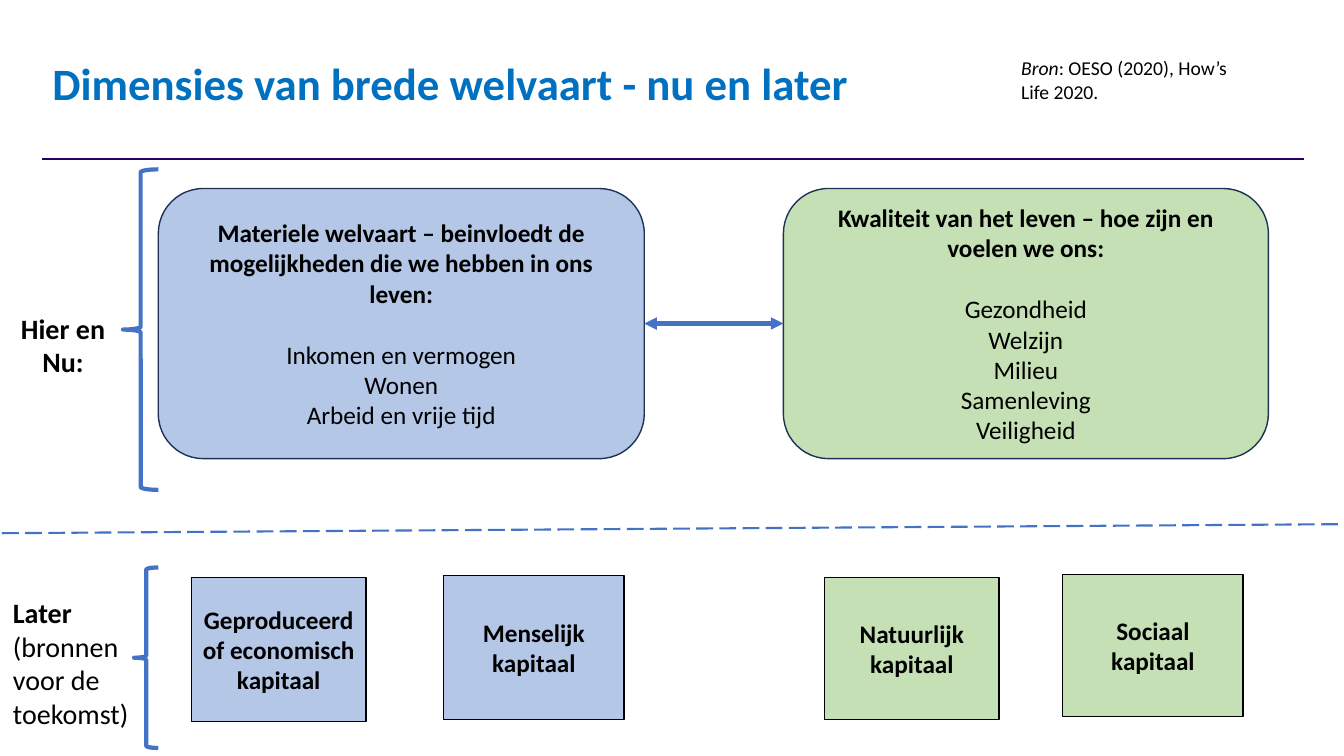
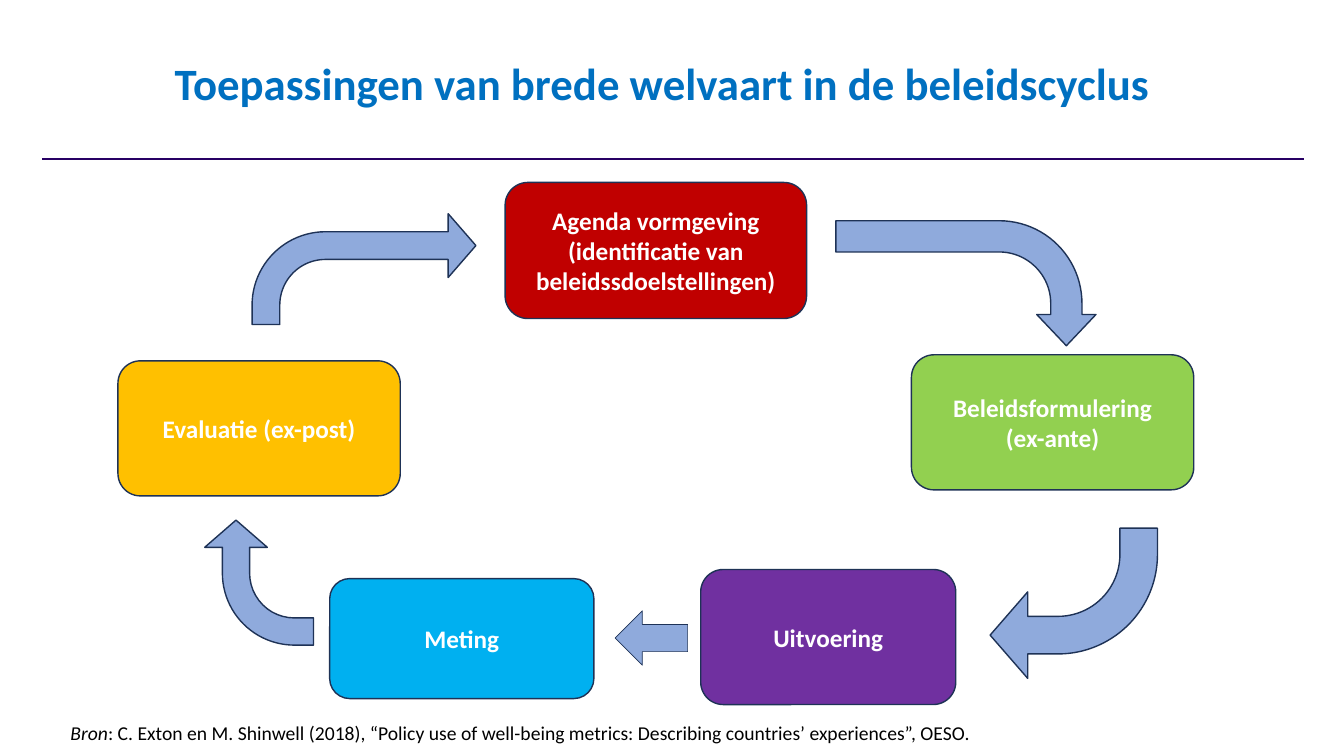
from lxml import etree
from pptx import Presentation
from pptx.dml.color import RGBColor
from pptx.enum import dml, shapes, text
from pptx.oxml import ns
from pptx.util import Inches, Pt

# Shared style
FONT = "Calibri"
BLACK = RGBColor(0x00, 0x00, 0x00)
WHITE = RGBColor(0xFF, 0xFF, 0xFF)
TITLE_BLUE = RGBColor(0x00, 0x70, 0xC0)
RULE_PURPLE = RGBColor(0x28, 0x00, 0x64)
ACCENT_BLUE = RGBColor(0x44, 0x72, 0xC4)
OUTLINE = RGBColor(0x1E, 0x32, 0x56)
PALE_BLUE = RGBColor(0xB4, 0xC7, 0xE7)
PALE_GREEN = RGBColor(0xC5, 0xE0, 0xB4)
ARROW_BLUE = RGBColor(0x8F, 0xAA, 0xDC)
RED = RGBColor(0xC0, 0x00, 0x00)
GREEN = RGBColor(0x92, 0xD0, 0x50)
PURPLE = RGBColor(0x70, 0x30, 0xA0)
SKY = RGBColor(0x00, 0xB0, 0xF0)
AMBER = RGBColor(0xFF, 0xC0, 0x00)

LEFT, CENTER = text.PP_ALIGN.LEFT, text.PP_ALIGN.CENTER
SHAPE = shapes.MSO_SHAPE

# Slide 1 content: places are left, top, width, height in inches
NOW_TITLE = "Dimensies van brede welvaart - nu en later"
DIMENSIONS = [
    ((1.57, 1.87, 4.82, 2.68), PALE_BLUE,
     "Materiele welvaart – beinvloedt de mogelijkheden die we hebben in ons leven:",
     ["Inkomen en vermogen", "Wonen", "Arbeid en vrije tijd"]),
    ((7.77, 1.87, 4.81, 2.68), PALE_GREEN,
     "Kwaliteit van het leven – hoe zijn en voelen we ons:",
     ["Gezondheid", "Welzijn", "Milieu", "Samenleving", "Veiligheid"]),
]
CAPITALS = [
    ((1.9, 5.73, 1.73, 1.43), PALE_BLUE, "Geproduceerd of economisch kapitaal"),
    ((4.4, 5.71, 1.79, 1.43), PALE_BLUE, "Menselijk kapitaal"),
    ((8.18, 5.73, 1.73, 1.41), PALE_GREEN, "Natuurlijk kapitaal"),
    ((10.54, 5.7, 1.79, 1.41), PALE_GREEN, "Sociaal kapitaal"),
]
BRACES = [(1.22, 1.68, 0.35, 3.18), (1.33, 5.63, 0.24, 1.79)]
NOW_LABEL = ((0.02, 3.04, 1.21, 0.77), [("Hier en Nu:", "bold")])
LATER_LABEL = ((0.03, 5.86, 1.36, 1.45),
               [("Later ", "bold"), ("(bronnen voor de toekomst)", "")])
NOW_SOURCE = ((10.03, 0.51, 2.55, 0.57),
              [("Bron", "italic"), (": OESO (2020), How’s Life 2020.", "")])

# Slide 2 content
CYCLE_TITLE = "Toepassingen van brede welvaart in de beleidscyclus"
PHASES = [
    ((5.01, 1.81, 2.99, 1.35), RED,
     "Agenda vormgeving (identificatie van beleidssdoelstellingen)"),
    ((9.04, 3.52, 2.8, 1.34), GREEN, "Beleidsformulering\n(ex-ante)"),
    ((6.95, 5.65, 2.53, 1.34), PURPLE, "Uitvoering"),
    ((3.27, 5.74, 2.62, 1.19), SKY, "Meting"),
    ((1.17, 3.58, 2.8, 1.34), AMBER, "Evaluatie (ex-post)"),
]
# Place before rotation, rotation in degrees, half width of the arrowhead
BENT_ARROWS = [
    ((8.96, 1.52, 1.24, 2.58), 90, 0.237),
    ((9.82, 5.24, 1.66, 1.49), 180, 0.288),
    ((1.95, 5.24, 1.24, 1.08), 270, 0.288),
    ((2.5, 2.12, 2.22, 1.1), 0, 0.288),
]
STRAIGHT_ARROW = (6.1, 6.06, 0.72, 0.54)
CYCLE_SOURCE = ((0.6, 7.1, 11.57, 0.34),
                [("Bron", "italic"),
                 (": C. Exton en M. Shinwell (2018), “Policy use of well-being "
                  "metrics: Describing countries’ experiences”, OESO.", "")])


def inches(place):
    return [Inches(value) for value in place]


def style_run(run, size, color, bold=False, italic=False):
    run.font.name, run.font.size = FONT, Pt(size)
    run.font.color.rgb = color
    run.font.bold, run.font.italic = bold, italic


def add_figure(slide, preset, place, fill, line, width):
    figure = slide.shapes.add_shape(preset, *inches(place))
    figure.shadow.inherit = False
    if fill is None:
        figure.fill.background()
    else:
        figure.fill.solid()
        figure.fill.fore_color.rgb = fill
    figure.line.color.rgb, figure.line.width = line, Pt(width)
    return figure


def add_box(slide, preset, place, fill, line, heading, color, items=()):
    """A box with a bold heading and, below a gap, plain items."""
    box = add_figure(slide, preset, place, fill, line, 1)
    frame = box.text_frame
    frame.word_wrap = True
    frame.vertical_anchor = text.MSO_ANCHOR.MIDDLE
    frame.text = "\n".join([heading, *items])
    first_item = len(frame.paragraphs) - len(items)
    for index, paragraph in enumerate(frame.paragraphs):
        paragraph.alignment = CENTER
        if index == first_item:
            paragraph.space_before = Pt(22)
        for run in paragraph.runs:
            style_run(run, 18, color, bold=index < first_item)
    return box


def add_label(slide, place, parts, size, align=LEFT):
    frame = slide.shapes.add_textbox(*inches(place)).text_frame
    frame.word_wrap = True
    paragraph = frame.paragraphs[0]
    paragraph.alignment = align
    for words, style in parts:
        run = paragraph.add_run()
        run.text = words
        style_run(run, size, BLACK, style == "bold", style == "italic")


def add_line(slide, ends, color, width, dash=None, arrows=False):
    line = slide.shapes.add_connector(shapes.MSO_CONNECTOR.STRAIGHT, *inches(ends))
    line.line.color.rgb, line.line.width = color, Pt(width)
    if dash:
        line.line.dash_style = dash
    properties = line._element.spPr
    if arrows:
        outline = properties.find(ns.qn("a:ln"))
        for end in ("a:headEnd", "a:tailEnd"):
            etree.SubElement(outline, ns.qn(end), type="triangle")
    etree.SubElement(properties, ns.qn("a:effectLst"))
    return line


def add_titled_slide(deck, words, align):
    """The shared frame: title and the rule below it."""
    slide = deck.slides.add_slide(deck.slide_layouts[5])
    title = slide.shapes.title
    title.left, title.top, title.width, title.height = inches((0.42, 0.58, 12.3, 0.56))
    frame = title.text_frame
    frame.text = words
    frame.auto_size = text.MSO_AUTO_SIZE.NONE
    frame.vertical_anchor = text.MSO_ANCHOR.MIDDLE
    paragraph = frame.paragraphs[0]
    paragraph.alignment, paragraph.line_spacing = align, Pt(32)
    style_run(paragraph.runs[0], 32, TITLE_BLUE, bold=True)
    add_line(slide, (0.42, 1.58, 12.93, 1.58), RULE_PURPLE, 1.5)
    return slide


def build_dimensions(deck):
    slide = add_titled_slide(deck, NOW_TITLE, LEFT)
    # Here and now
    material, quality = [
        add_box(slide, SHAPE.ROUNDED_RECTANGLE, place, fill, OUTLINE, heading, BLACK, items)
        for place, fill, heading, items in DIMENSIONS]
    exchange = add_line(slide, (6.39, 3.21, 7.77, 3.21), ACCENT_BLUE, 3, arrows=True)
    exchange.begin_connect(material, 3)
    exchange.end_connect(quality, 1)
    # Later
    add_line(slide, (0.02, 5.29, 13.33, 5.2), ACCENT_BLUE, 1.5, dml.MSO_LINE.LONG_DASH)
    for place, fill, words in CAPITALS:
        add_box(slide, SHAPE.RECTANGLE, place, fill, BLACK, words, BLACK)
    # Braces, labels and source
    for place in BRACES:
        add_figure(slide, SHAPE.LEFT_BRACE, place, None, ACCENT_BLUE, 3)
    add_label(slide, *NOW_LABEL, 20, CENTER)
    add_label(slide, *LATER_LABEL, 20)
    add_label(slide, *NOW_SOURCE, 14)


def build_cycle(deck):
    slide = add_titled_slide(deck, CYCLE_TITLE, CENTER)
    # Phases
    for place, fill, words in PHASES:
        add_box(slide, SHAPE.ROUNDED_RECTANGLE, place, fill, OUTLINE, words, WHITE)
    # Arrows between the phases
    for place, rotation, head in BENT_ARROWS:
        arrow = add_figure(slide, SHAPE.BENT_ARROW, place, ARROW_BLUE, OUTLINE, 1)
        arrow.rotation = rotation
        for index, value in enumerate((0.25, head, 0.25, 0.662)):
            arrow.adjustments[index] = value
    add_figure(slide, SHAPE.LEFT_ARROW, STRAIGHT_ARROW, ARROW_BLUE, OUTLINE, 0.5)
    add_label(slide, *CYCLE_SOURCE, 14)


def main():
    deck = Presentation()
    deck.slide_width, deck.slide_height = Inches(13.33), Inches(7.5)
    build_dimensions(deck)
    build_cycle(deck)
    deck.save("out.pptx")


if __name__ == "__main__":
    main()
